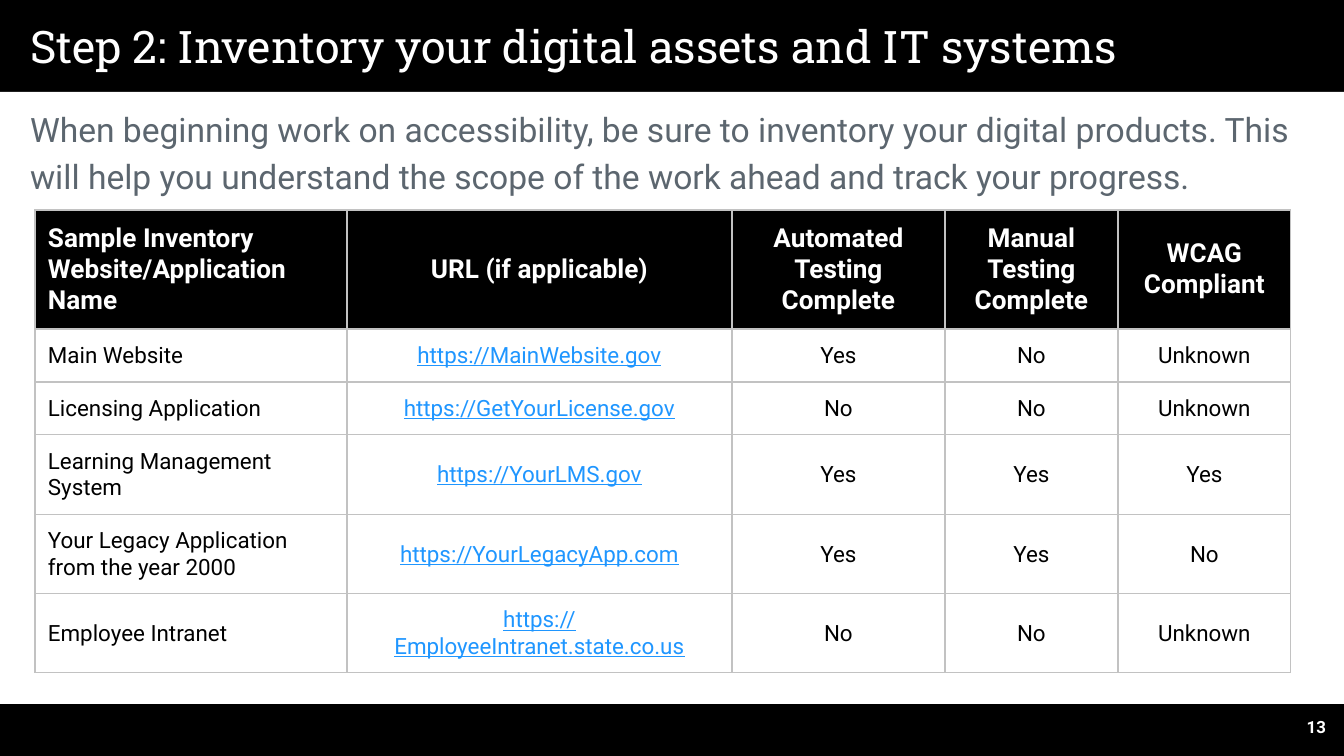
from pptx import Presentation
from pptx.dml.color import RGBColor
from pptx.enum.shapes import MSO_SHAPE
from pptx.enum.text import MSO_ANCHOR, MSO_AUTO_SIZE, PP_ALIGN
from pptx.oxml import parse_xml
from pptx.oxml.ns import nsdecls
from pptx.util import Pt

RECTANGLE = MSO_SHAPE.RECTANGLE
TOP, MIDDLE = MSO_ANCHOR.TOP, MSO_ANCHOR.MIDDLE
LEFT, CENTER, RIGHT = PP_ALIGN.LEFT, PP_ALIGN.CENTER, PP_ALIGN.RIGHT
NO_FIT = MSO_AUTO_SIZE.NONE

EMU_PER_PX = 914400 / 134.4
INSET = 13
COLORS = {
    "black": "000000",
    "white": "FFFFFF",
    "slate": "5C666F",
    "link": "1F96FF",
    "grid": "C2C2C2",
}

COLUMN_WIDTHS = [312, 385, 213, 173, 173]
ROW_HEIGHTS = [119, 53, 53, 80, 79, 79]
URL_COLUMN = 1
INVENTORY = [
    ["Sample Inventory Website/Application Name", "URL (if applicable)",
     "Automated Testing Complete", "Manual Testing Complete", "WCAG Compliant"],
    ["Main Website", "https://MainWebsite.gov", "Yes", "No", "Unknown"],
    ["Licensing Application", "https://GetYourLicense.gov", "No", "No", "Unknown"],
    ["Learning Management System", "https://YourLMS.gov", "Yes", "Yes", "Yes"],
    ["Your Legacy Application from the year 2000", "https://YourLegacyApp.com",
     "Yes", "Yes", "No"],
    ["Employee Intranet", "https://EmployeeIntranet.state.co.us", "No", "No", "Unknown"],
]


def px(length):
    return round(length * EMU_PER_PX)


def color(name):
    return RGBColor.from_string(COLORS[name])


def place(shape, left, top, width, height):
    shape.left, shape.top = px(left), px(top)
    shape.width, shape.height = px(width), px(height)


def set_insets(box):
    box.margin_left = box.margin_right = px(INSET)
    box.margin_top = box.margin_bottom = px(INSET)


def write(frame, text, *, size, fill, font="Roboto", bold=False,
          underline=False, align=LEFT, spacing=1.0):
    paragraph = frame.paragraphs[0]
    paragraph.alignment = align
    paragraph.line_spacing = spacing
    paragraph.space_before = Pt(0)
    run = paragraph.add_run()
    run.text = text
    run.font.name = font
    run.font.size = Pt(size)
    run.font.bold = bold
    run.font.underline = underline
    run.font.color.rgb = color(fill)


def write_box(shape, text, bounds, anchor=TOP, **text_format):
    place(shape, *bounds)
    frame = shape.text_frame
    frame.word_wrap = True
    frame.auto_size = NO_FIT
    frame.vertical_anchor = anchor
    set_insets(frame)
    write(frame, text, **text_format)


def remove_bullet(paragraph):
    properties = paragraph._p.get_or_add_pPr()
    properties.set("marL", "0")
    properties.set("indent", "0")
    properties.append(parse_xml(f"<a:buNone {nsdecls('a')}/>"))


def add_panel(slide):
    panel = slide.shapes.add_shape(RECTANGLE, 0, px(92), px(1344), px(612))
    panel.shadow.inherit = False
    panel.fill.solid()
    panel.fill.fore_color.rgb = color("white")
    panel.line.fill.background()
    # Behind the title and body placeholders
    panel.element.getparent().insert(2, panel.element)


def add_borders(cell):
    properties = cell._tc.get_or_add_tcPr()
    for side in ("lnL", "lnR", "lnT", "lnB"):
        properties.append(parse_xml(
            f'<a:{side} {nsdecls("a")} w="{Pt(0.75)}"><a:solidFill>'
            f'<a:srgbClr val="{COLORS["grid"]}"/></a:solidFill></a:{side}>'))


def fill_cell(cell, text, row, column):
    header = row == 0
    link = column == URL_COLUMN and not header
    add_borders(cell)
    cell.fill.solid()
    cell.fill.fore_color.rgb = color("black" if header else "white")
    cell.vertical_anchor = MIDDLE
    set_insets(cell)
    text_color = "white" if header else "link" if link else "black"
    write(cell.text_frame, text, size=14 if header else 12, fill=text_color,
          bold=header, underline=link, align=CENTER if column else LEFT)


def add_inventory(slide):
    table = slide.shapes.add_table(
        len(ROW_HEIGHTS), len(COLUMN_WIDTHS), px(35), px(210),
        px(sum(COLUMN_WIDTHS)), px(sum(ROW_HEIGHTS))).table
    for column, width in zip(table.columns, COLUMN_WIDTHS):
        column.width = px(width)
    for row, height in zip(table.rows, ROW_HEIGHTS):
        row.height = px(height)
    for row, values in enumerate(INVENTORY):
        for column, value in enumerate(values):
            fill_cell(table.cell(row, column), value, row, column)


def main():
    deck = Presentation()
    deck.slide_width, deck.slide_height = px(1344), px(756)
    slide = deck.slides.add_slide(deck.slide_layouts[1])

    # Black frame with a white content area
    slide.background.fill.solid()
    slide.background.fill.fore_color.rgb = color("black")
    add_panel(slide)

    # Title and introduction
    write_box(slide.shapes.title, "Step 2: Inventory your digital assets and IT systems",
              (17, 7, 1164, 78), MIDDLE, size=24, fill="white", font="Roboto Slab")
    introduction = slide.placeholders[1]
    remove_bullet(introduction.text_frame.paragraphs[0])
    write_box(introduction,
              "When beginning work on accessibility, be sure to inventory your digital "
              "products. This will help you understand the scope of the work ahead and "
              "track your progress.",
              (17, 90, 1301, 612), size=18, fill="slate", spacing=1.15)

    # Sample inventory
    add_inventory(slide)

    # Slide number
    write_box(slide.shapes.add_textbox(0, 0, 0, 0), "13", (1289, 708, 50, 40),
              size=9, fill="white", bold=True, align=RIGHT, spacing=0.8)

    deck.save("out.pptx")


if __name__ == "__main__":
    main()
